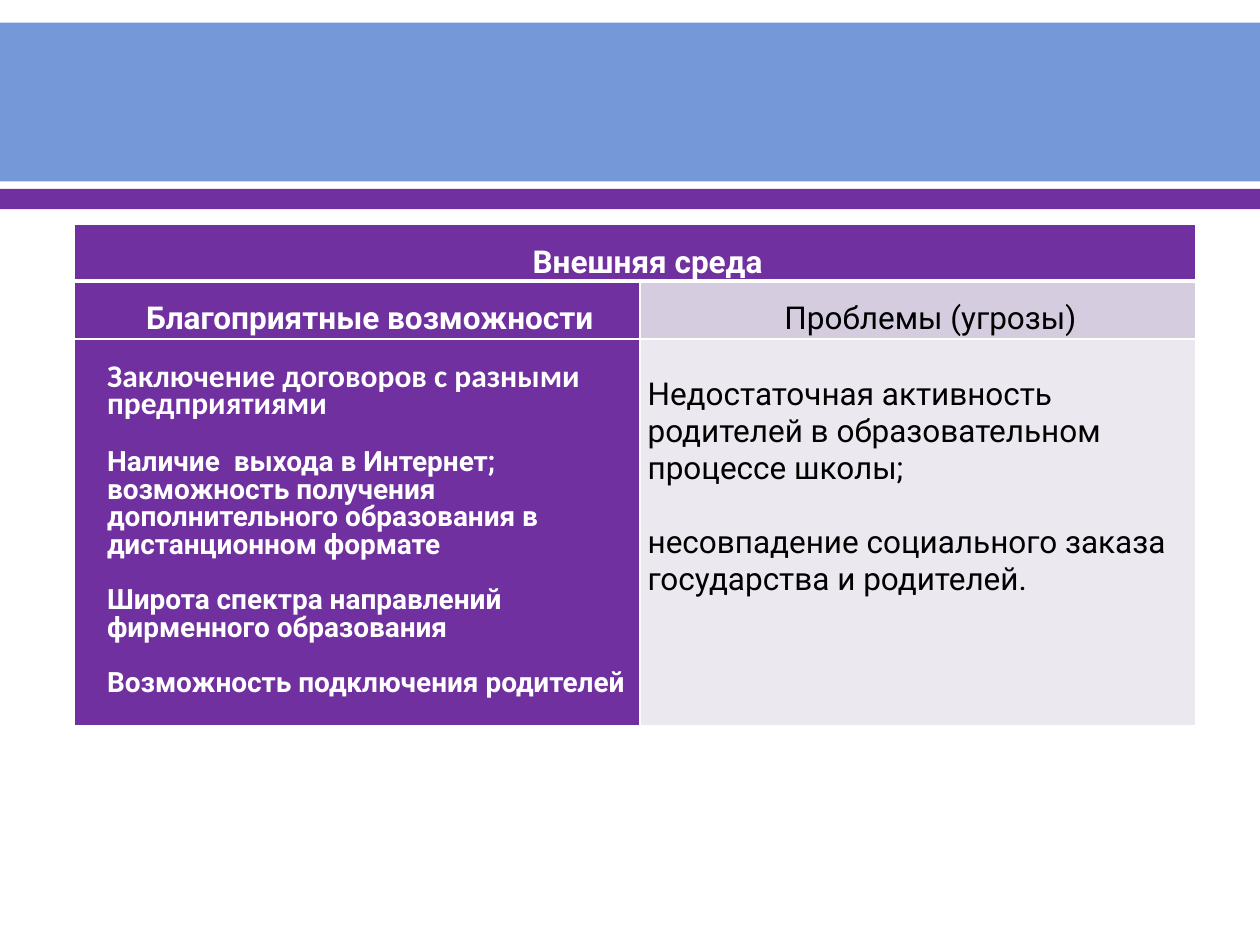
import pptx
import pptx.dml.color
import pptx.enum.shapes
import pptx.enum.text
import pptx.oxml
import pptx.oxml.ns
import pptx.util

WIDTH, HEIGHT = 10, 7.5
COLORS = {
    "blue": "7598D9",
    "purple": "7030A0",
    "lilac": "D5CDDF",
    "pale": "EBE8F0",
    "white": "FFFFFF",
    "black": "000000",
}
COLUMNS = [4.49, 4.41]
ROWS = [0.45, 0.46, 3.07]
CENTER = pptx.enum.text.PP_ALIGN.CENTER
LEFT = pptx.enum.text.PP_ALIGN.LEFT
LINE = pptx.util.Pt(15.8)
INDENT = 0.26
INSET = 0.06

OPPORTUNITIES = [
    "Заключение договоров с разными предприятиями",
    "Наличие  выхода в Интернет; возможность получения дополнительного образования в дистанционном формате",
    "Широта спектра направлений фирменного образования",
    "Возможность подключения родителей",
]
THREATS = [
    "Недостаточная активность родителей в образовательном процессе школы;",
    "несовпадение социального заказа государства и родителей.",
]


def rgb(name):
    return pptx.dml.color.RGBColor.from_string(COLORS[name])


def add_band(slide, top, height, color):
    band = slide.shapes.add_shape(
        pptx.enum.shapes.MSO_SHAPE.RECTANGLE,
        0,
        pptx.util.Inches(top),
        pptx.util.Inches(WIDTH),
        pptx.util.Inches(height),
    )
    band.shadow.inherit = False
    band.fill.solid()
    band.fill.fore_color.rgb = rgb(color)
    band.line.fill.background()


def set_borders(cell, bottom=1):
    properties = cell._tc.get_or_add_tcPr()
    widths = {"lnL": 1, "lnR": 1, "lnT": 1, "lnB": bottom}
    for index, (side, width) in enumerate(widths.items()):
        border = pptx.oxml.parse_xml(
            f'<a:{side} {pptx.oxml.ns.nsdecls("a")} w="{pptx.util.Pt(width)}">'
            f'<a:solidFill><a:srgbClr val="{COLORS["white"]}"/></a:solidFill></a:{side}>'
        )
        properties.insert(index, border)


def style_cell(cell, fill, left, top):
    cell.fill.solid()
    cell.fill.fore_color.rgb = rgb(fill)
    cell.margin_left = pptx.util.Inches(left)
    cell.margin_right = pptx.util.Inches(INSET)
    cell.margin_top = pptx.util.Inches(top)
    cell.margin_bottom = 0


def write_cell(cell, texts, color="white", bold=True, size=18, align=LEFT, spacing=LINE, gap=0):
    cell.text_frame.text = "\n".join(texts)
    for index, paragraph in enumerate(cell.text_frame.paragraphs):
        paragraph.alignment = align
        paragraph.line_spacing = spacing
        paragraph.space_before = pptx.util.Pt(gap if index else 0)
        font = paragraph.runs[0].font
        font.name = "Roboto"
        font.size = pptx.util.Pt(size)
        font.bold = bold
        font.color.rgb = rgb(color)


def add_environment_table(slide):
    table = slide.shapes.add_table(
        len(ROWS),
        len(COLUMNS),
        pptx.util.Inches(0.59),
        pptx.util.Inches(1.78),
        pptx.util.Inches(sum(COLUMNS)),
        pptx.util.Inches(sum(ROWS)),
    ).table
    for column, width in zip(table.columns, COLUMNS):
        column.width = pptx.util.Inches(width)
    for row, height in zip(table.rows, ROWS):
        row.height = pptx.util.Inches(height)
    table.cell(0, 0).merge(table.cell(0, 1))

    fills = [("purple", "purple"), ("purple", "lilac"), ("purple", "pale")]
    tops = [(0.01, 0.01), (0.23, 0.23), (0.23, 0.3)]
    for row in range(len(ROWS)):
        for column in range(len(COLUMNS)):
            cell = table.cell(row, column)
            left = INSET if (row, column) == (2, 1) else INDENT
            style_cell(cell, fills[row][column], left, tops[row][column])
            set_borders(cell, bottom=1 if row else 3)

    write_cell(table.cell(0, 0), ["Внешняя среда"], align=CENTER, spacing=1.5)
    write_cell(table.cell(1, 0), ["Благоприятные возможности"], align=CENTER)
    write_cell(table.cell(1, 1), ["Проблемы (угрозы)"], "black", False, align=CENTER)
    write_cell(table.cell(2, 0), OPPORTUNITIES, size=16, gap=15.8)
    write_cell(table.cell(2, 1), THREATS, "black", False, spacing=1.0, gap=21.1)
    first_font = table.cell(2, 0).text_frame.paragraphs[0].runs[0].font
    first_font.name = "Calibri"
    first_font.size = pptx.util.Pt(18)


def main():
    presentation = pptx.Presentation()
    presentation.slide_width = pptx.util.Inches(WIDTH)
    presentation.slide_height = pptx.util.Inches(HEIGHT)
    slide = presentation.slides.add_slide(presentation.slide_layouts[6])
    add_band(slide, 0.18, 1.26, "blue")
    add_band(slide, HEIGHT / 5, 0.16, "purple")
    add_environment_table(slide)
    presentation.save("out.pptx")


if __name__ == "__main__":
    main()
